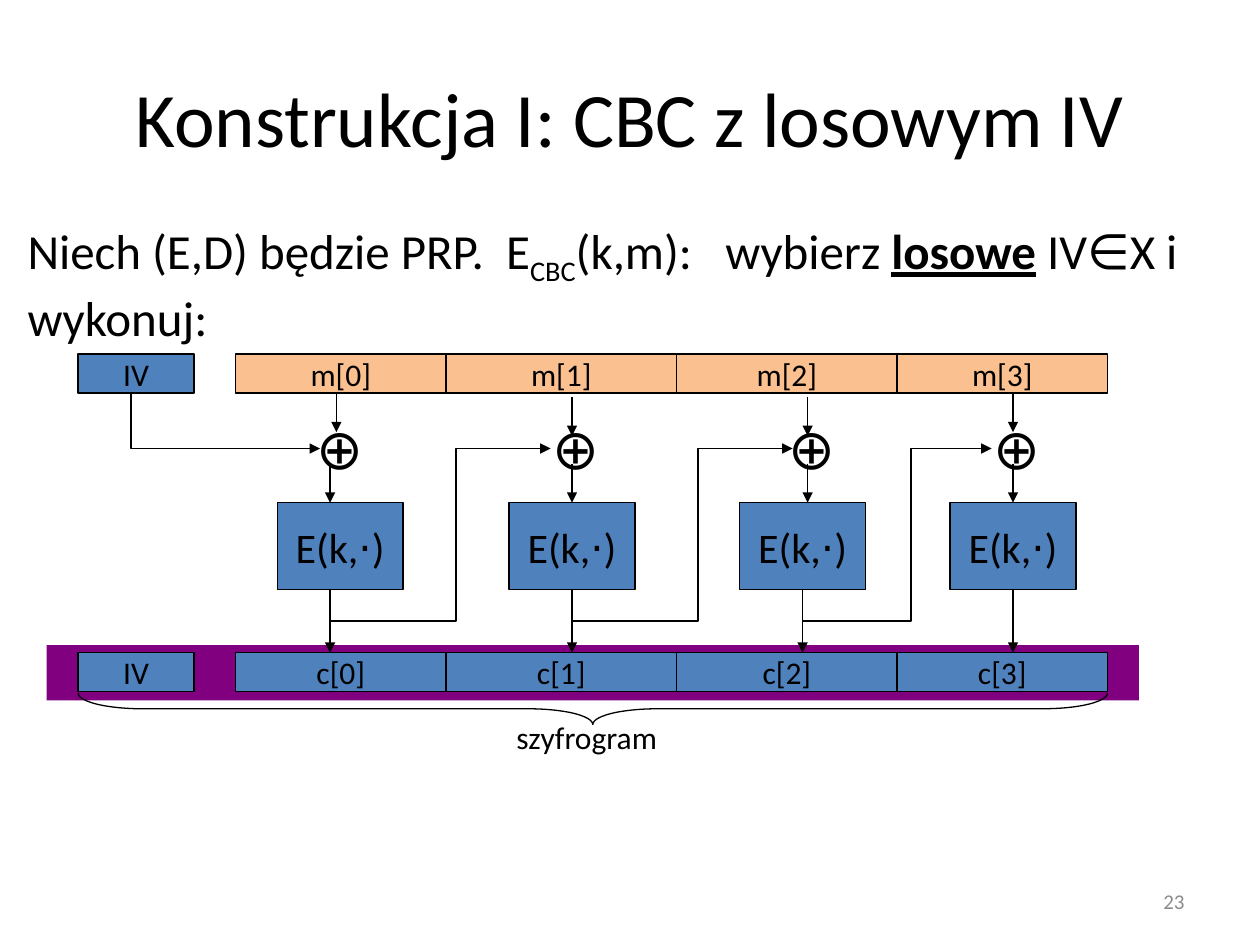
from dataclasses import dataclass
from lxml import etree
from pptx import Presentation
from pptx.dml.color import RGBColor
from pptx.enum.shapes import MSO_CONNECTOR, MSO_SHAPE
from pptx.enum.text import MSO_ANCHOR, PP_ALIGN
from pptx.oxml.ns import qn
from pptx.util import Inches, Pt

RECT, BRACE = MSO_SHAPE.RECTANGLE, MSO_SHAPE.LEFT_BRACE
STRAIGHT = MSO_CONNECTOR.STRAIGHT
LEFT, MID, RIGHT = PP_ALIGN.LEFT, PP_ALIGN.CENTER, PP_ALIGN.RIGHT
TOP, CENTER = MSO_ANCHOR.TOP, MSO_ANCHOR.MIDDLE
WIDE, HIGH = Inches(10), Inches(7.5)
COLS, ROWS = 100, 75


@dataclass(frozen=True)
class Theme:
    font: str = "Calibri"
    ink: str = "000000"
    gray: str = "8C8C8C"
    blue: str = "4F81BD"
    peach: str = "FAC090"
    plum: str = "800080"
    title: int = 44
    xor: int = 32
    body: int = 28
    block: int = 24
    label: int = 18
    page: int = 12
    thin: float = 0.75


@dataclass(frozen=True)
class Box:
    left: float
    top: float
    width: float
    height: float

    def place(self) -> tuple:
        return col(self.left), row(self.top), col(self.width), row(self.height)


@dataclass(frozen=True)
class Lane:
    left: float
    right: float
    block: float
    xor: float
    feed: float
    mid: float
    out: float
    drop: float


@dataclass(frozen=True)
class Chain:
    start: float
    bend: float
    end: float


LOOK = Theme()
LANES = [
    Lane(18.7, 35.4, 22, 24.1, 26.7, 26.2, 26.2, 31.2),
    Lane(35.4, 53.7, 40.4, 42.9, 45.4, 45.4, 45.4, 31.5),
    Lane(53.7, 71.2, 58.7, 61.6, 64.1, 64.1, 63.7, 31.5),
    Lane(71.2, 87.9, 75.4, 77.9, 80.4, 80.4, 80.4, 31.2),
]
CHAINS = [Chain(26.2, 36.2, 43.7), Chain(45.4, 55.4, 62.9), Chain(63.7, 72.3, 78.7)]
PLAIN, CODED, CELL = 28.1, 51.8, 3.1
BLOCK, DEPTH = 39.9, 6.9
JOIN, FORK = 35.6, 49.3


def col(n: float) -> int:
    return round(WIDE * n / COLS)


def row(n: float) -> int:
    return round(HIGH * n / ROWS)


def tint(name: str) -> RGBColor:
    return RGBColor.from_string(name)


def style(para, size: int, align=LEFT, color: str = LOOK.ink) -> None:
    para.alignment = align
    para.font.name = LOOK.font
    para.font.size = Pt(size)
    para.font.color.rgb = tint(color)


def write(slide, box: Box, text: str, size: int, align=LEFT,
          color: str = LOOK.ink, anchor=TOP, wrap: bool = False):
    frame = slide.shapes.add_textbox(*box.place()).text_frame
    frame.word_wrap = wrap
    frame.vertical_anchor = anchor
    para = frame.paragraphs[0]
    para.text = text
    style(para, size, align, color)
    return para


def outline(shape, width: float = LOOK.thin) -> None:
    shape.line.color.rgb = tint(LOOK.ink)
    shape.line.width = Pt(width)


def point(shape) -> None:
    line = shape._element.spPr.find(qn("a:ln"))
    etree.SubElement(line, qn("a:tailEnd"), type="triangle")


def panel(slide, box: Box, fill: str, text: str = "", size: int = LOOK.label):
    shape = slide.shapes.add_shape(RECT, *box.place())
    shape.shadow.inherit = False
    shape.fill.solid()
    shape.fill.fore_color.rgb = tint(fill)
    if not text:
        shape.line.fill.background()
        return
    outline(shape)
    frame = shape.text_frame
    frame.word_wrap = False
    frame.vertical_anchor = CENTER
    frame.paragraphs[0].text = text
    style(frame.paragraphs[0], size, MID)


def arrow(slide, x: float, top: float, end: float) -> None:
    line = slide.shapes.add_connector(STRAIGHT, col(x), row(top), col(x), row(end))
    outline(line)
    point(line)
    etree.SubElement(line._element.spPr, qn("a:effectLst"))


def wire(slide, spots: list[tuple[float, float]], width: float = LOOK.thin) -> None:
    first, *rest = [(col(x), row(y)) for x, y in spots]
    path = slide.shapes.build_freeform(*first)
    path.add_line_segments(rest, close=False)
    shape = path.convert_to_shape()
    shape.shadow.inherit = False
    shape.fill.background()
    outline(shape, width)
    point(shape)


def intro(slide) -> None:
    para = write(slide, Box(1.2, 17, 97.5, 46.2), "Niech (E,D) będzie PRP.  E",
                 LOOK.body, wrap=True)
    low, _, bold, _ = [para.add_run() for _ in range(4)]
    words = ("CBC", "(k,m):   wybierz ", "losowe", " IV∈X i  wykonuj:")
    for run, text in zip(para.runs[1:], words):
        run.text = text
    low.font._element.set("baseline", "-25000")
    bold.font.bold = bold.font.underline = True


def lane(slide, num: int, part: Lane) -> None:
    width = part.right - part.left
    panel(slide, Box(part.left, PLAIN, width, CELL), LOOK.peach, f"m[{num}]")
    panel(slide, Box(part.left, CODED, width, CELL), LOOK.blue, f"c[{num}]")
    panel(slide, Box(part.block, BLOCK, 10, DEPTH), LOOK.blue, "E(k,⋅)", LOOK.block)
    write(slide, Box(part.xor, 32.3, 5.5, 6.4), "⊕", LOOK.xor)
    arrow(slide, part.feed, part.drop, part.drop + CELL)
    arrow(slide, part.mid, 36.8, BLOCK)
    arrow(slide, part.out, BLOCK + DEPTH, CODED)


def brace(slide) -> None:
    shape = slide.shapes.add_shape(BRACE, *Box(45.8, 15.4, 2.5, 81.7).place())
    shape.rotation = 270
    shape.adjustments[0] = 2.04
    shape.shadow.inherit = False
    shape.fill.background()
    outline(shape)


def main() -> None:
    deck = Presentation()
    deck.slide_width, deck.slide_height = WIDE, HIGH
    slide = deck.slides.add_slide(deck.slide_layouts[6])
    write(slide, Box(5, 3, 90, 12.5), "Konstrukcja I: CBC z losowym IV",
          LOOK.title, MID, anchor=CENTER, wrap=True)
    write(slide, Box(71.7, 69.5, 23.3, 4), "23", LOOK.page, RIGHT,
          LOOK.gray, CENTER, True)
    panel(slide, Box(3.7, 51.2, 86.7, 4.4), LOOK.plum)
    intro(slide)
    for top in (PLAIN, CODED):
        panel(slide, Box(6.2, top, 9.2, CELL), LOOK.blue, "IV")
    for num, part in enumerate(LANES):
        lane(slide, num, part)
    wire(slide, [(10.4, PLAIN + CELL), (10.4, JOIN), (25.4, JOIN)], 1)
    for link in CHAINS:
        wire(slide, [(link.start, FORK), (link.bend, FORK),
                     (link.bend, JOIN), (link.end, JOIN)])
    brace(slide)
    write(slide, Box(40, 56.5, 13.3, 4), "szyfrogram", LOOK.label)
    deck.save("out.pptx")


if __name__ == "__main__":
    main()
